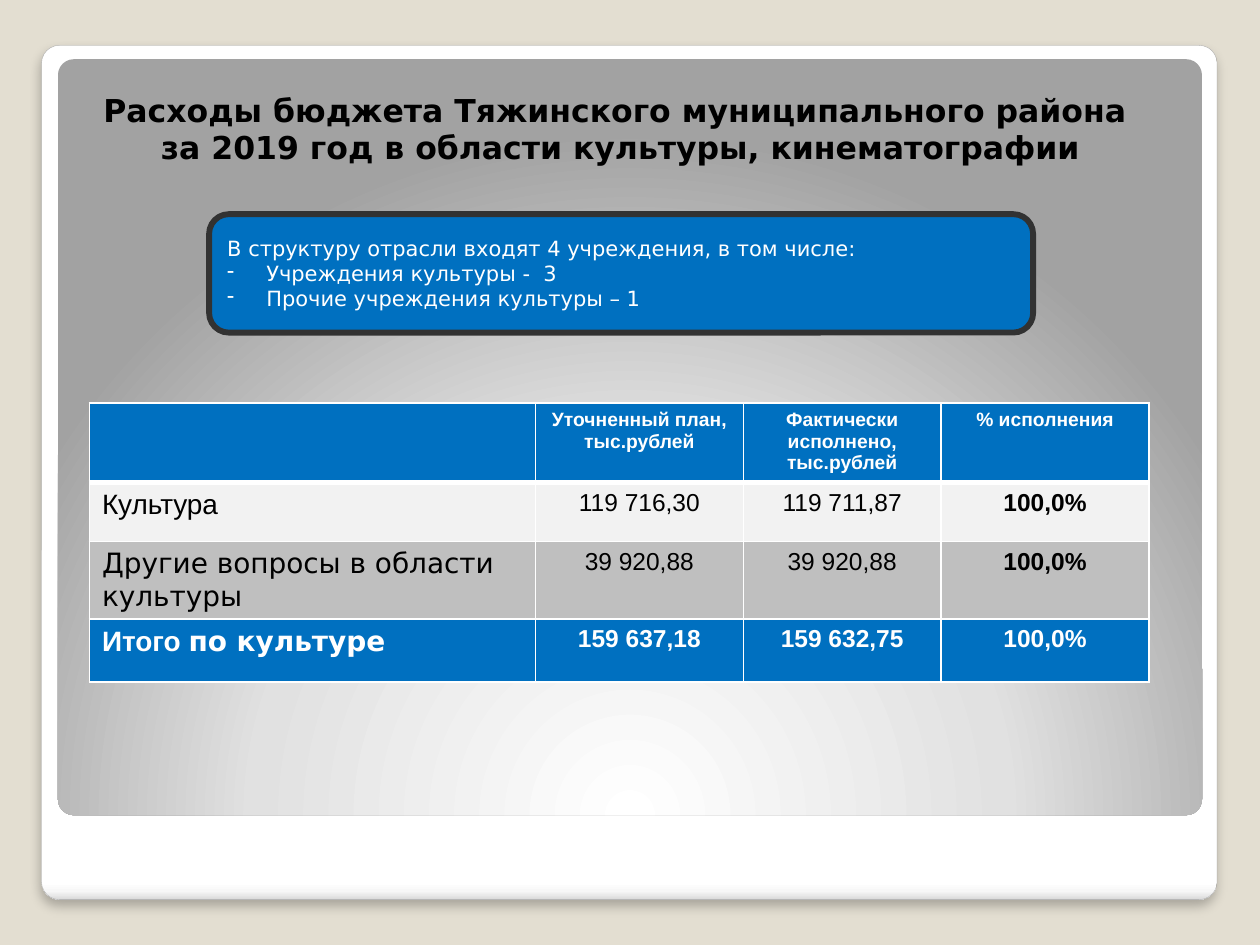
import pptx
import pptx.util
import pptx.oxml
import pptx.oxml.ns
import pptx.dml.color
import pptx.enum.shapes
import pptx.enum.text
from pptx.util import Inches

COLORS = {
    "background": "E3DED1", "white": "FFFFFF", "black": "000000",
    "blue": "0070C0", "light": "F2F2F2", "gray": "BFBFBF",
    "outline": "323232", "frame": "A4A4A4",
}
SANS, WIDE = "Arial", "DejaVu Sans"
ALIGN = pptx.enum.text.PP_ALIGN
ANCHOR = pptx.enum.text.MSO_ANCHOR


def rgb(name):
    return pptx.dml.color.RGBColor.from_string(COLORS[name])


def xml(text):
    """Parse one DrawingML element."""
    head, rest = text.split(">", 1)
    slash = "/" if head.endswith("/") else ""
    head = head.rstrip("/")
    return pptx.oxml.parse_xml(f"{head} {pptx.oxml.ns.nsdecls('a')}{slash}>{rest}")


def add_text(para, text, size=12, font=SANS, color="black", bold=False, align=None):
    """Append text to a paragraph; a newline becomes a line break."""
    if align is not None:
        para.alignment = align
    for number, line in enumerate(text.split("\n")):
        if number:
            para.add_line_break()
        span = para.add_run()
        span.text = line
        span.font.size = pptx.util.Pt(size)
        span.font.name = font
        span.font.bold = bold
        span.font.color.rgb = rgb(color)


def add_round_box(page, left, top, width, height, radius=None):
    box = page.shapes.add_shape(
        pptx.enum.shapes.MSO_SHAPE.ROUNDED_RECTANGLE,
        Inches(left), Inches(top), Inches(width), Inches(height))
    box.shadow.inherit = False
    if radius is not None:
        box.adjustments[0] = radius
    return box


def set_gradient(box, stops, direction):
    marks = "".join(f'<a:gs pos="{place * 1000}"><a:srgbClr val="{color}"/></a:gs>'
                    for place, color in stops)
    properties = box._element.spPr
    properties.find(pptx.oxml.ns.qn("a:prstGeom")).addnext(
        xml(f'<a:gradFill rotWithShape="1"><a:gsLst>{marks}</a:gsLst>{direction}</a:gradFill>'))


def add_panels(page):
    # White frame with a soft shadow
    frame = add_round_box(page, 0.33, 0.36, 9.33, 6.78, 0.021)
    set_gradient(frame, [(0, "FFFFFF"), (98, "FFFFFF"), (99, "F7F7F7"), (100, "DADADA")],
                 '<a:lin ang="5400000" scaled="0"/>')
    frame.line.color.rgb = rgb("frame")
    frame.line.width = pptx.util.Pt(0.16)
    effects = frame._element.spPr.find(pptx.oxml.ns.qn("a:effectLst"))
    effects.append(xml(
        '<a:outerShdw blurRad="76200" dist="50800" dir="5400000" algn="tl" rotWithShape="0">'
        f'<a:srgbClr val="{COLORS["black"]}"><a:alpha val="25000"/></a:srgbClr></a:outerShdw>'))

    # Gray panel lit from below
    panel = add_round_box(page, 0.46, 0.47, 9.08, 6, 0.021)
    set_gradient(panel, [(0, "FFFFFF"), (55, "E1E1E1"), (100, "A2A2A2")],
                 '<a:path path="circle">'
                 '<a:fillToRect l="50000" t="175000" r="50000" b="-75000"/></a:path>')
    panel.line.fill.background()


def add_title(page, text):
    title = page.shapes.title
    page.shapes._spTree.append(title._element)  # in front of the panels
    title.left, title.top = Inches(0.09), Inches(0.68)
    title.width, title.height = Inches(9.67), Inches(0.69)
    title.text_frame.vertical_anchor = ANCHOR.BOTTOM
    title.text_frame.auto_size = pptx.enum.text.MSO_AUTO_SIZE.NONE
    add_text(title.text_frame.paragraphs[0], text, size=18, font=WIDE, bold=True,
             align=ALIGN.CENTER)


def set_borders(cell, top, bottom):
    properties = cell._tc.get_or_add_tcPr()
    for side, width in (("L", 1), ("R", 1), ("T", top), ("B", bottom)):
        properties.append(xml(
            f'<a:ln{side} w="{pptx.util.Pt(width)}"><a:solidFill>'
            f'<a:srgbClr val="{COLORS["white"]}"/></a:solidFill></a:ln{side}>'))


def add_budget_table(page):
    # Each row: fill, text colour, bold figures, label spans, figures
    rows = [
        ("blue", "white", True, [],
         ["Уточненный план, тыс.рублей", "Фактически исполнено, тыс.рублей", "% исполнения"]),
        ("light", "black", False, [("Культура", SANS)],
         ["119 716,30", "119 711,87", "100,0%"]),
        ("gray", "black", False, [("Другие вопросы в области культуры", WIDE)],
         ["39 920,88", "39 920,88", "100,0%"]),
        ("blue", "white", True, [("Итого ", SANS), ("по культуре", WIDE)],
         ["159 637,18", "159 632,75", "100,0%"]),
    ]
    widths, heights = [3.54, 1.65, 1.57, 1.65], [0.63, 0.47, 0.49, 0.5]
    table = page.shapes.add_table(
        len(rows), len(widths), Inches(0.71), Inches(3.2),
        Inches(sum(widths)), Inches(sum(heights))).table
    for column, width in zip(table.columns, widths):
        column.width = Inches(width)
    for index, (fill, color, bold, label, figures) in enumerate(rows):
        table.rows[index].height = Inches(heights[index])
        cells = list(table.rows[index].cells)
        for cell in cells:
            set_borders(cell, 3 if index == 1 else 1, 3 if index == 0 else 1)
            cell.fill.solid()
            cell.fill.fore_color.rgb = rgb(fill)
        for text, font in label:
            add_text(cells[0].text_frame.paragraphs[0], text, size=16, font=font,
                     color=color, bold=bold)
        for cell, text in zip(cells[1:], figures):
            add_text(cell.text_frame.paragraphs[0], text, size=14 if index else 11,
                     color=color, bold=bold or cell is cells[-1], align=ALIGN.CENTER)


def add_structure_box(page, heading, items):
    box = add_round_box(page, 1.66, 1.7, 6.54, 0.94)
    box.fill.solid()
    box.fill.fore_color.rgb = rgb("blue")
    box.line.color.rgb = rgb("outline")
    box.line.width = pptx.util.Pt(3.35)
    frame = box.text_frame
    frame.word_wrap = True
    frame.vertical_anchor = ANCHOR.MIDDLE
    style = dict(font=WIDE, color="white", align=ALIGN.JUSTIFY)
    add_text(frame.paragraphs[0], heading, **style)
    for item in items:
        para = frame.add_paragraph()
        add_text(para, item, **style)
        properties = para._p.get_or_add_pPr()
        properties.set("marL", str(Inches(0.31)))
        properties.set("indent", str(-Inches(0.31)))
        properties.append(xml('<a:buChar char="-"/>'))


def main():
    deck = pptx.Presentation()
    deck.slide_width, deck.slide_height = Inches(10), Inches(7.5)
    page = deck.slides.add_slide(deck.slide_layouts[5])
    page.background.fill.solid()
    page.background.fill.fore_color.rgb = rgb("background")

    add_panels(page)
    add_title(page, "Расходы бюджета Тяжинского муниципального района \n"
                    "за 2019 год в области культуры, кинематографии")
    add_budget_table(page)
    add_structure_box(page, "В структуру отрасли входят 4 учреждения, в том числе:",
                      ["Учреждения культуры -  3 ", "Прочие учреждения культуры – 1"])
    deck.save("out.pptx")


if __name__ == "__main__":
    main()
